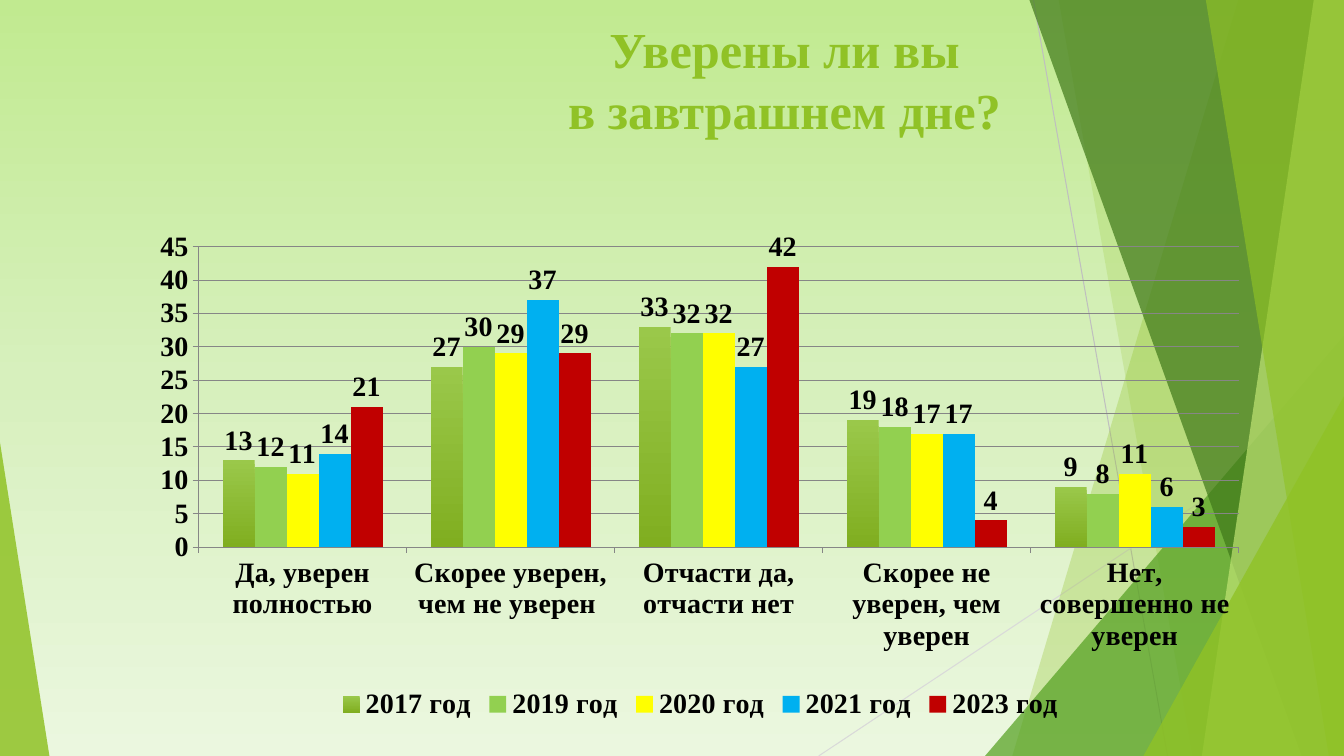
from copy import deepcopy

from lxml.etree import SubElement
from pptx import Presentation
from pptx.chart.data import CategoryChartData
from pptx.dml.color import RGBColor
from pptx.enum.chart import XL_CHART_TYPE, XL_LABEL_POSITION, XL_LEGEND_POSITION, XL_TICK_MARK
from pptx.enum.shapes import MSO_CONNECTOR, MSO_SHAPE
from pptx.enum.text import MSO_ANCHOR, MSO_AUTO_SIZE, PP_ALIGN
from pptx.oxml.ns import qn
from pptx.util import Inches, Pt

GREEN = RGBColor(0x90, 0xC2, 0x26)
MID_GREEN = RGBColor(0x54, 0xA0, 0x21)
DARK_GREEN = RGBColor(0x3F, 0x78, 0x19)
PALE_GREEN = RGBColor(0xC0, 0xE4, 0x74)
BAR_TOP = RGBColor(0x9A, 0xC8, 0x4A)
BAR_BOTTOM = RGBColor(0x80, 0xAE, 0x20)
LIGHT_GREEN = RGBColor(0x92, 0xD0, 0x50)
YELLOW = RGBColor(0xFF, 0xFF, 0x00)
BLUE = RGBColor(0x00, 0xB0, 0xF0)
RED = RGBColor(0xC0, 0x00, 0x00)
BLACK = RGBColor(0x00, 0x00, 0x00)
GRID_GRAY = RGBColor(0x86, 0x86, 0x86)
RAY_GRAY = RGBColor(0xBF, 0xBF, 0xBF)
RAY_LIGHT = RGBColor(0xD9, 0xD9, 0xD9)
SKY = [(0, RGBColor(0xC1, 0xEA, 0x90)), (0.5, RGBColor(0xD7, 0xF0, 0xBD)),
       (1, RGBColor(0xEB, 0xF7, 0xDF))]
FONT = "Times New Roman"
W, H = 13.33, 7.5

deck = Presentation()
deck.slide_width, deck.slide_height = Inches(W), Inches(H)
slide = deck.slides.add_slide(deck.slide_layouts[5])
shapes = slide.shapes


def paint_glass(facet, color, opacity):
    """Fill a facet with a see-through colour, without outline or shadow."""
    facet.shadow.inherit = False
    facet.line.fill.background()
    facet.fill.solid()
    facet.fill.fore_color.rgb = color
    tone = facet.element.spPr.find(qn("a:solidFill"))[0]
    SubElement(tone, qn("a:alpha"), val=str(opacity * 1000))


# Background
sky = slide.background.fill
sky.gradient()
sky.gradient_angle = 270
stop_list = slide.element.find(".//" + qn("a:gsLst"))
stop_list.insert(1, deepcopy(stop_list[0]))
for stop, (position, color) in zip(sky.gradient_stops, SKY):
    stop.position = position
    stop.color.rgb = color

# Thin rays
for x1, y1, x2, y2, color in [(10.25, 0, 11.58, H, RAY_GRAY), (W, 4.03, 8.12, H, RAY_LIGHT)]:
    ray = shapes.add_connector(MSO_CONNECTOR.STRAIGHT, *map(Inches, (x1, y1, x2, y2)))
    ray.line.color.rgb = color
    ray.line.width = Pt(0.75)
    SubElement(ray.element.spPr, qn("a:effectLst"))

# Facets: a band runs from its top x and bottom x to the right edge;
# a corner is a right triangle standing on the bottom edge.
facets = [
    ("band", (12.28, 10.04), GREEN, 30),
    ("band", (10.5, 11.83), GREEN, 20),
    ("corner", (9.77, 3.33, 3.56, 1), MID_GREEN, 72),
    ("band", (10.21, 12.91), DARK_GREEN, 70),
    ("band", (13.03, 11.92), PALE_GREEN, 70),
    ("band", (11.96, 13.18), GREEN, 65),
    ("corner", (11.34, 3.93, 1.99, 1), GREEN, 80),
    ("corner", (0, 4.39, 0.49, 0), GREEN, 85),
]
for kind, place, color, opacity in facets:
    if kind == "band":
        top_x, bottom_x = place
        outline = shapes.build_freeform(Inches(top_x), 0)
        outline.add_line_segments(
            [(Inches(x), Inches(y)) for x, y in [(W, 0), (W, H), (bottom_x, H)]])
        facet = outline.convert_to_shape()
    else:
        left, top, width, apex = place
        facet = shapes.add_shape(MSO_SHAPE.ISOSCELES_TRIANGLE,
                                 *map(Inches, (left, top, width, H - top)))
        facet.adjustments[0] = apex
    paint_glass(facet, color, opacity)

# Question, brought in front of the facets
question = shapes.title
question.element.getparent().append(question.element)
question.left, question.top, question.width, question.height = map(
    Inches, (3.67, 0.13, 8.35, 1.71))
frame = question.text_frame
frame.text = "Уверены ли вы \vв завтрашнем дне? "
frame.vertical_anchor = MSO_ANCHOR.TOP
frame.auto_size = MSO_AUTO_SIZE.NONE
frame.paragraphs[0].alignment = PP_ALIGN.CENTER
for run in frame.paragraphs[0].runs:
    run.font.name, run.font.size, run.font.bold = FONT, Pt(36), True
    run.font.color.rgb = GREEN

# Answers by year
years = [
    ("2017 год", (13, 27, 33, 19, 9), GREEN),
    ("2019 год", (12, 30, 32, 18, 8), LIGHT_GREEN),
    ("2020 год", (11, 29, 32, 17, 11), YELLOW),
    ("2021 год", (14, 37, 27, 17, 6), BLUE),
    ("2023 год", (21, 29, 42, 4, 3), RED),
]
answers = CategoryChartData()
answers.categories = ["Да, уверен полностью", "Скорее уверен, чем не уверен ",
                      "Отчасти да, отчасти нет", "Скорее не уверен, чем уверен",
                      "Нет, совершенно не уверен"]
for year, shares, _ in years:
    answers.add_series(year, shares)
chart = shapes.add_chart(XL_CHART_TYPE.COLUMN_CLUSTERED,
                         *map(Inches, (1.38, 2.25, 11.13, 4.95)), answers).chart
chart.has_title = False
chart.font.name, chart.font.size, chart.font.bold = FONT, Pt(20), True
chart.font.color.rgb = BLACK
chart.has_legend = True
chart.legend.position = XL_LEGEND_POSITION.BOTTOM
chart.legend.include_in_layout = False

plot = chart.plots[0]
plot.vary_by_categories = False
plot.gap_width, plot.overlap = 150, 0
plot.has_data_labels = True
plot.data_labels.show_value = True
plot.data_labels.position = XL_LABEL_POSITION.OUTSIDE_END
for bars, (_, _, color) in zip(plot.series, years):
    bars.format.fill.solid()
    bars.format.fill.fore_color.rgb = color

first_year = plot.series[0].format.fill
first_year.gradient()
first_year.gradient_angle = 270
for stop, color in zip(first_year.gradient_stops, (BAR_TOP, BAR_BOTTOM)):
    stop.color.rgb = color

scale = chart.value_axis
scale.minimum_scale, scale.maximum_scale, scale.major_unit = 0, 45, 5
scale.has_major_gridlines = True
for axis in (scale, chart.category_axis):
    axis.major_tick_mark = XL_TICK_MARK.OUTSIDE
for ruled in (scale, scale.major_gridlines, chart.category_axis):
    ruled.format.line.color.rgb = GRID_GRAY
    ruled.format.line.width = Pt(0.75)

plot_area = chart.element.find(".//" + qn("c:plotArea"))
for old_layout in plot_area.findall(qn("c:layout")):
    plot_area.remove(old_layout)
layout = SubElement(plot_area, qn("c:layout"))
plot_area.insert(0, layout)
manual = SubElement(layout, qn("c:manualLayout"))
for tag, val in [("layoutTarget", "inner"), ("xMode", "edge"), ("yMode", "edge"),
                 ("x", "0.053"), ("y", "0.04"), ("w", "0.927"), ("h", "0.602")]:
    SubElement(manual, qn("c:" + tag), val=val)

deck.save("out.pptx")
